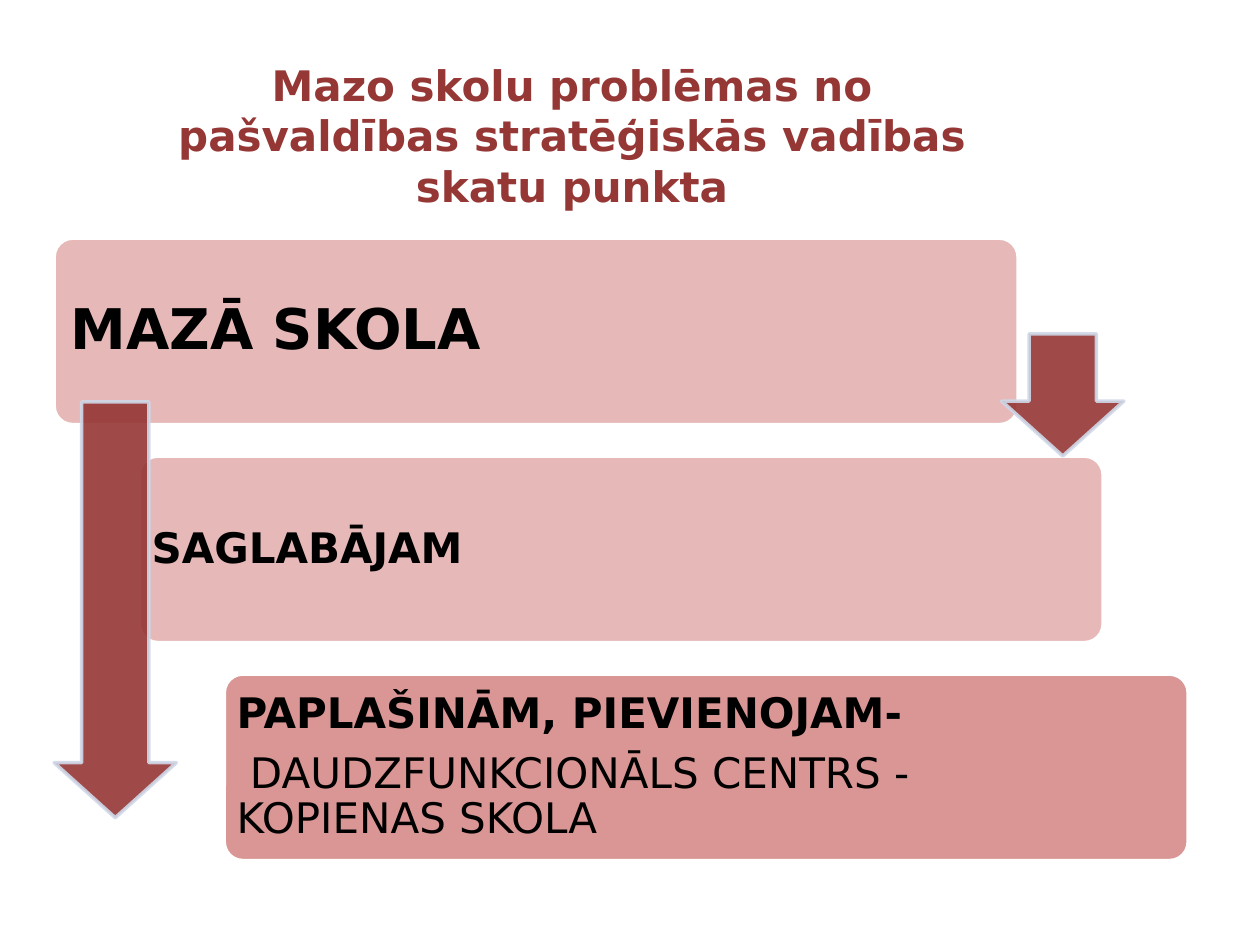
import lxml.etree
import pptx
import pptx.dml.color
import pptx.enum.shapes
import pptx.enum.text
import pptx.oxml.ns
import pptx.util

Inches = pptx.util.Inches
Points = pptx.util.Pt
Shapes = pptx.enum.shapes.MSO_SHAPE
Anchor = pptx.enum.text.MSO_ANCHOR
Align = pptx.enum.text.PP_ALIGN


def paint(fill, color, opacity=100):
    fill.solid()
    fill.fore_color.rgb = pptx.dml.color.RGBColor.from_string(color)
    if opacity < 100:
        node = fill._xPr.find(".//" + pptx.oxml.ns.qn("a:srgbClr"))
        alpha = lxml.etree.SubElement(node, pptx.oxml.ns.qn("a:alpha"))
        alpha.set("val", str(opacity * 1000))


def write(shape, lines, size=24, color="000000", align=Align.LEFT,
          anchor=Anchor.MIDDLE, inset=0.1, spacing=0.9, after=0):
    frame = shape.text_frame
    frame.word_wrap = True
    frame.auto_size = pptx.enum.text.MSO_AUTO_SIZE.NONE
    frame.vertical_anchor = anchor
    frame.margin_left = frame.margin_right = Inches(inset)
    frame.margin_top = frame.margin_bottom = Inches(min(inset, 0.05) if anchor == Anchor.TOP else inset)
    for index, (text, bold) in enumerate(lines):
        paragraph = frame.add_paragraph() if index else frame.paragraphs[0]
        paragraph.text = text
        paragraph.alignment = align
        paragraph.line_spacing = spacing
        paragraph.space_after = Points(after)
        for run in paragraph.runs:
            run.font.name = "DejaVu Sans"
            run.font.size = Points(size)
            run.font.bold = bold
            run.font.color.rgb = pptx.dml.color.RGBColor.from_string(color)


presentation = pptx.Presentation()
presentation.slide_width = Inches(10)
presentation.slide_height = Inches(7.5)
slide = presentation.slides.add_slide(presentation.slide_layouts[5])

title = slide.shapes.title
title.left, title.top, title.width, title.height = map(Inches, (1.14, 0.42, 6.8, 1.49))
write(title, [("Mazo skolu problēmas no pašvaldības stratēģiskās vadības skatu punkta", True)],
      color="953735", align=Align.CENTER, anchor=Anchor.TOP, spacing=1)

left, top = 0.43, 1.89
step_x, step_y = 0.675, 1.73
width, height = 7.65, 1.48
steps = [
    ("E6B9B8", 6.13, 32, 0.13, [("MAZĀ SKOLA", True)]),
    ("E6B9B8", 6.01, 24, 0.1, [("SAGLABĀJAM", True)]),
    ("D99694", 6.01, 24, 0.1, [("PAPLAŠINĀM, PIEVIENOJAM-", True),
                               (" DAUDZFUNKCIONĀLS CENTRS -\vKOPIENAS SKOLA", False)]),
]
for row, (color, text_width, size, inset, lines) in enumerate(steps):
    x, y = Inches(left + row * step_x), Inches(top + row * step_y)
    panel = slide.shapes.add_shape(Shapes.ROUNDED_RECTANGLE, x, y, Inches(width), Inches(height))
    panel.adjustments[0] = 0.1
    panel.shadow.inherit = False
    paint(panel.fill, color)
    paint(panel.line.fill, "FFFFFF")
    panel.line.width = Points(2)
    label = slide.shapes.add_textbox(x, y, Inches(text_width), Inches(height))
    write(label, lines, size=size, inset=inset, after=size * 0.35)

for x, y, arrow_height in [(7.95, 2.65, 0.97), (left, 3.19, 3.3)]:
    arrow = slide.shapes.add_shape(Shapes.DOWN_ARROW, Inches(x), Inches(y), Inches(0.97), Inches(arrow_height))
    arrow.adjustments[0] = 0.55
    arrow.adjustments[1] = 0.45
    arrow.shadow.inherit = False
    paint(arrow.fill, "953735", opacity=90)
    paint(arrow.line.fill, "D0D8E8", opacity=90)
    arrow.line.width = Points(2)

presentation.save("out.pptx")
